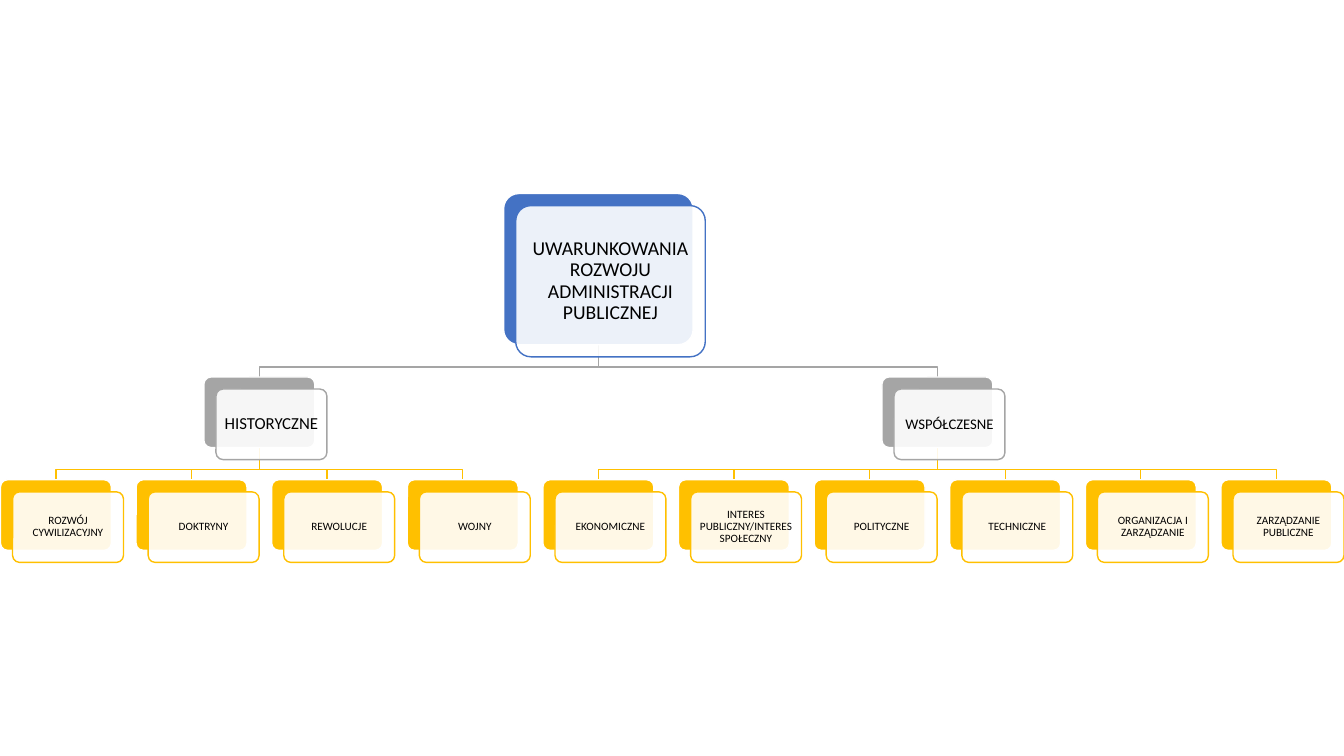
import pptx
import pptx.util
import pptx.dml.color
import pptx.enum.shapes
import pptx.enum.text
import pptx.oxml
import pptx.oxml.ns
from dataclasses import dataclass
from pptx.util import Inches


@dataclass
class Level:
    top: float
    width: float
    height: float
    color: str
    inset: float


ROOT = Level(1.92, 1.88, 1.5, "4472C4", 0.06)
ERA = Level(3.74, 1.1, 0.7, "A5A5A5", 0.05)
FACTOR = Level(4.76, 1.1, 0.7, "FFC000", 0.03)

ROOT_TEXT = "UWARUNKOWANIA ROZWOJU ADMINISTRACJI PUBLICZNEJ"
ERAS = [
    ("HISTORYCZNE", 12, ["ROZWÓJ CYWILIZACYJNY", "DOKTRYNY", "REWOLUCJE", "WOJNY"]),
    ("WSPÓŁCZESNE", 10.5, ["EKONOMICZNE", "INTERES PUBLICZNY/INTERES SPOŁECZNY",
                           "POLITYCZNE", "TECHNICZNE", "ORGANIZACJA I ZARZĄDZANIE",
                           "ZARZĄDZANIE PUBLICZNE"]),
]
FIRST_CENTER = 0.555
PITCH = 1.345
OFFSET = 0.12
ELBOW = 0.1


def rgb(color):
    return pptx.dml.color.RGBColor.from_string(color)


def set_line(s, color):
    s.line.color.rgb = rgb(color)
    s.line.width = pptx.util.Pt(1)


def add_branch(slide, parent, parent_x, child, child_x):
    start = parent.top + parent.height
    bend = child.top - ELBOW
    points = [(parent_x, bend), (child_x, bend), (child_x, child.top)]
    builder = slide.shapes.build_freeform(Inches(parent_x), Inches(start))
    builder.add_line_segments([(Inches(x), Inches(y)) for x, y in points], close=False)
    s = builder.convert_to_shape()
    s.shadow.inherit = False
    s.fill.background()
    set_line(s, child.color)


def add_panel(slide, level, x, y, fill, line):
    s = slide.shapes.add_shape(pptx.enum.shapes.MSO_SHAPE.ROUNDED_RECTANGLE,
                               Inches(x), Inches(y),
                               Inches(level.width), Inches(level.height))
    s.adjustments[0] = 0.1
    s.shadow.inherit = False
    s.fill.solid()
    s.fill.fore_color.rgb = rgb(fill)
    set_line(s, line)
    return s


def set_alpha(s, percent):
    color = s.fill._xPr.find(".//" + pptx.oxml.ns.qn("a:srgbClr"))
    alpha = pptx.oxml.parse_xml(
        f'<a:alpha {pptx.oxml.ns.nsdecls("a")} val="{percent * 1000}"/>')
    color.append(alpha)


def set_text(s, text, size, inset):
    tf = s.text_frame
    tf.text = text
    tf.word_wrap = True
    tf.vertical_anchor = pptx.enum.text.MSO_ANCHOR.MIDDLE
    tf.margin_left = tf.margin_right = Inches(inset)
    tf.margin_top = tf.margin_bottom = Inches(inset)
    p = tf.paragraphs[0]
    p.alignment = pptx.enum.text.PP_ALIGN.CENTER
    p.line_spacing = 0.9
    r = p.runs[0]
    r.font.name = "Calibri"
    r.font.size = pptx.util.Pt(size)
    r.font.color.rgb = rgb("000000")


def add_card(slide, level, center, text, size):
    left = center - level.width / 2
    add_panel(slide, level, left, level.top, level.color, "FFFFFF")
    s = add_panel(slide, level, left + OFFSET, level.top + OFFSET, "FFFFFF", level.color)
    set_alpha(s, 90)
    set_text(s, text, size, level.inset)


def main():
    prs = pptx.Presentation()
    prs.slide_width = Inches(13.33)
    prs.slide_height = Inches(7.5)
    slide = prs.slides.add_slide(prs.slide_layouts[6])

    cards = []
    branches = []
    era_centers = []
    count = 0
    for era, size, factors in ERAS:
        centers = [FIRST_CENTER + PITCH * (count + i) for i in range(len(factors))]
        count += len(factors)
        middle = (centers[0] + centers[-1]) / 2
        era_centers.append(middle)
        cards.append((ERA, middle, era, size))
        for center, factor in zip(centers, factors):
            cards.append((FACTOR, center, factor, 8))
            branches.append((ERA, middle, FACTOR, center))

    root_center = sum(era_centers) / len(era_centers)
    cards.insert(0, (ROOT, root_center, ROOT_TEXT, 14))
    branches += [(ROOT, root_center, ERA, center) for center in era_centers]

    for branch in branches:
        add_branch(slide, *branch)
    for card in cards:
        add_card(slide, *card)
    prs.save("out.pptx")


if __name__ == "__main__":
    main()
